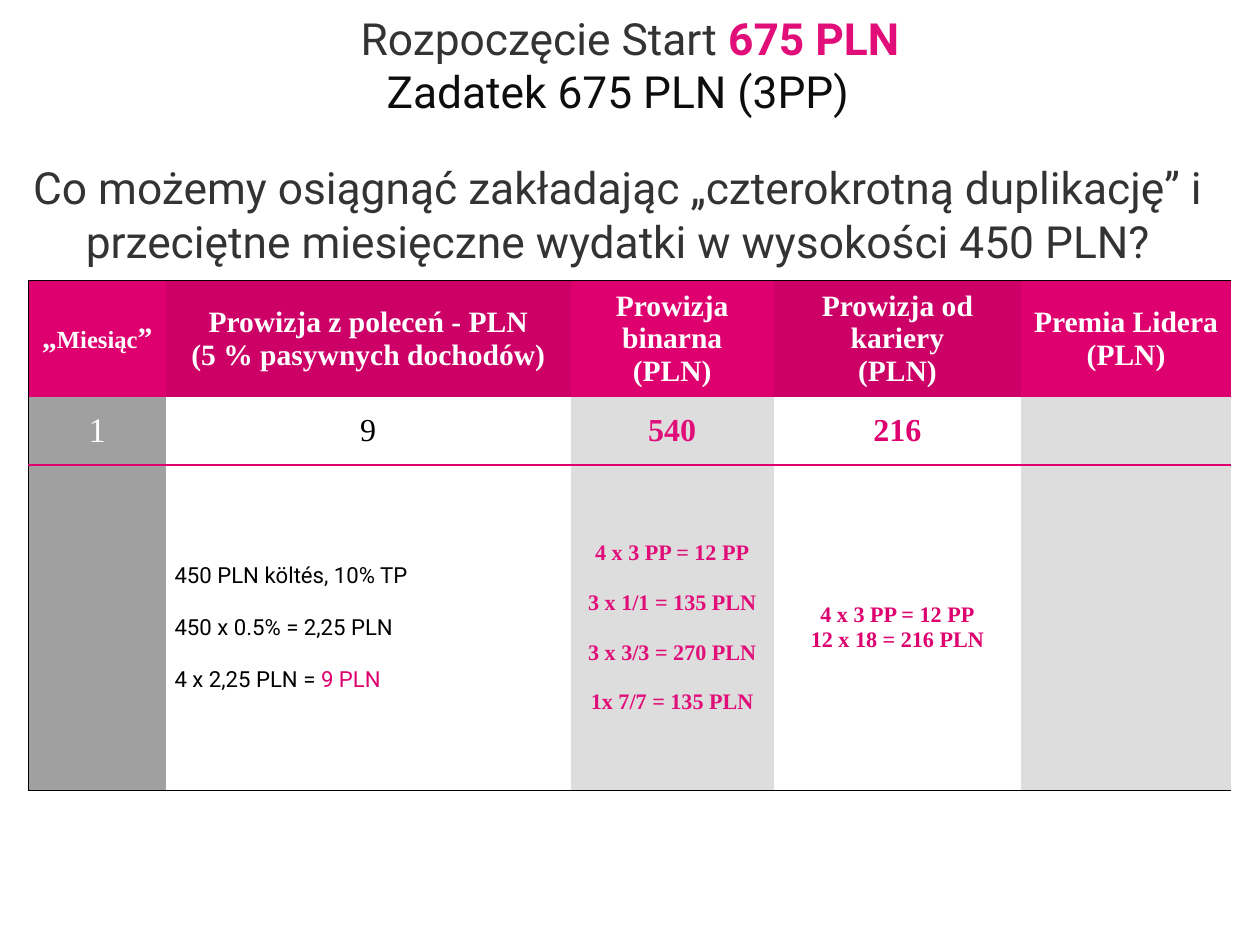
from dataclasses import dataclass

from lxml import etree
from pptx import Presentation
from pptx.dml.color import RGBColor
from pptx.enum.text import MSO_ANCHOR, PP_ALIGN
from pptx.oxml.ns import qn
from pptx.util import Cm, Pt

LEFT, CENTER = PP_ALIGN.LEFT, PP_ALIGN.CENTER
MIDDLE = MSO_ANCHOR.MIDDLE


@dataclass(frozen=True)
class Theme:
    """Colours, fonts and type sizes of the slide."""
    sans: str = "Roboto"
    serif: str = "Times New Roman"
    ink: str = "333333"
    dark: str = "0D0D0D"
    black: str = "000000"
    white: str = "FFFFFF"
    pink: str = "DE006E"
    deep: str = "CC0066"
    rose: str = "E10E79"
    gray: str = "A0A0A0"
    pale: str = "DDDDDD"
    title: int = 36
    lead: int = 28
    value: int = 26
    head: int = 24
    month: int = 20
    note: int = 18


T = Theme()


def run(text, size, color, font=T.serif, bold=False):
    """Describe one run of text."""
    return text, size, color, font, bold


def write(frame, lines, align=CENTER, gaps=()):
    """Write lines of runs, with the space before each line after the first."""
    for i, runs in enumerate(lines):
        para = frame.paragraphs[0] if i == 0 else frame.add_paragraph()
        para.alignment = align
        if i and gaps:
            para.space_before = Pt(gaps[i - 1])
        for text, size, color, font, bold in runs:
            for j, part in enumerate(text.split("\n")):
                if j:
                    para.add_line_break()
                item = para.add_run()
                item.text = part
                item.font.size = Pt(size)
                item.font.name = font
                item.font.bold = bold
                item.font.color.rgb = RGBColor.from_string(color)


def edge(cell, lines):
    """Draw the named sides of a cell and clear the others."""
    props = cell._tc.get_or_add_tcPr()
    for side in "LRTB":
        line = etree.SubElement(props, qn(f"a:ln{side}"))
        if side in lines:
            color, width = lines[side]
            line.set("w", str(Pt(width)))
            fill = etree.SubElement(line, qn("a:solidFill"))
            etree.SubElement(fill, qn("a:srgbClr")).set("val", color)
        else:
            line.set("w", "0")
            etree.SubElement(line, qn("a:noFill"))


def add_title(slide, left, top, width, height):
    """Place the heading and the question."""
    frame = slide.shapes.add_textbox(left, top, width, height).text_frame
    frame.word_wrap = True
    frame.vertical_anchor = MIDDLE
    frame.margin_left = frame.margin_right = Cm(0.15)
    frame.margin_top = frame.margin_bottom = Cm(0.15)
    write(frame, [
        [run("Rozpoczęcie Start ", T.title, T.ink, T.sans),
         run("675 PLN", T.title, T.rose, T.sans, True)],
        [run("Zadatek 675 PLN (3PP)", T.title, T.dark, T.sans)],
        [run("Co możemy osiągnąć zakładając „czterokrotną duplikację” i "
             "przeciętne miesięczne wydatki w wysokości 450 PLN?",
             T.title, T.ink, T.sans)],
    ], gaps=(0, 35))
    frame.paragraphs[1]._p.get_or_add_pPr().set("marR", str(Cm(0.69)))


def bold(text, size, color):
    """Make one line of bold serif text."""
    return [run(text, size, color, bold=True)]


def content():
    """List the lines of every cell, row by row."""
    heads = ["Prowizja z poleceń - PLN\n(5 % pasywnych dochodów)",
             "Prowizja binarna\n(PLN)", "Prowizja od kariery\n(PLN)",
             "Premia Lidera\n(PLN)"]
    month = [("„", T.head), ("Miesiąc", T.month), ("”", T.head)]
    sums = ["4 x 3 PP = 12 PP", "3 x 1/1 = 135 PLN",
            "3 x 3/3 = 270 PLN", "1x 7/7 = 135 PLN"]
    career = ["4 x 3 PP = 12 PP", "12 x 18 = 216 PLN"]
    costs = ["450 PLN költés, 10% TP", "450 x 0.5% = 2,25 PLN",
             "4 x 2,25 PLN = "]
    steps = [[run(text, T.note, T.black, T.sans)] for text in costs]
    steps[-1].append(run("9 PLN", T.note, T.pink, T.sans))
    return [
        [[[run(text, size, T.white, bold=True) for text, size in month]]]
        + [[bold(text, T.head, T.white)] for text in heads],
        [[[run("1", T.lead, T.white)]], [[run("9", T.value, T.black)]],
         [bold("540", T.value, T.rose)], [bold("216", T.value, T.pink)], []],
        [[], steps, [bold(text, T.note, T.rose) for text in sums],
         [bold(text, T.note, T.pink) for text in career], []],
    ]


def add_grid(slide, left, top, width, height):
    """Place the commission table."""
    rows = content()
    cols, tall = (3.92, 11.61, 5.82, 7.09, 6.02), (3.33, 1.96, 9.32)
    table = slide.shapes.add_table(
        len(rows), len(cols), left, top, width, height).table
    table.first_row = table.horz_banding = False
    for col, share in zip(table.columns, cols):
        col.width = int(width * share / sum(cols))
    for row, share in zip(table.rows, tall):
        row.height = int(height * share / sum(tall))
    heads = (T.pink, T.deep, T.pink, T.deep, T.pink)
    body = (T.gray, None, T.pale, None, T.pale)
    thin, rule = (T.black, 1), (T.pink, 1.5)
    sides = ({"T": thin}, {"B": rule}, {"T": rule, "B": thin})
    gaps = {(2, 1): (21,) * 2, (2, 2): (20.5,) * 3}
    for r, row in enumerate(rows):
        for c, lines in enumerate(row):
            cell = table.cell(r, c)
            edge(cell, sides[r] | ({"L": thin} if c == 0 else {}))
            color = body[c] if r else heads[c]
            if color:
                cell.fill.solid()
                cell.fill.fore_color.rgb = RGBColor.from_string(color)
            else:
                cell.fill.background()
            cell.vertical_anchor = MIDDLE
            align = LEFT if (r, c) == (2, 1) else CENTER
            write(cell.text_frame, lines, align, gaps.get((r, c), ()))


def main():
    """Build and save the slide."""
    deck = Presentation()
    deck.slide_width, deck.slide_height = Cm(36.12), Cm(27.1)
    slide = deck.slides.add_slide(deck.slide_layouts[6])
    add_title(slide, 0, 0, deck.slide_width, Cm(7.98))
    add_grid(slide, Cm(0.83), Cm(8.05), Cm(34.46), Cm(14.61))
    deck.save("out.pptx")


if __name__ == "__main__":
    main()
